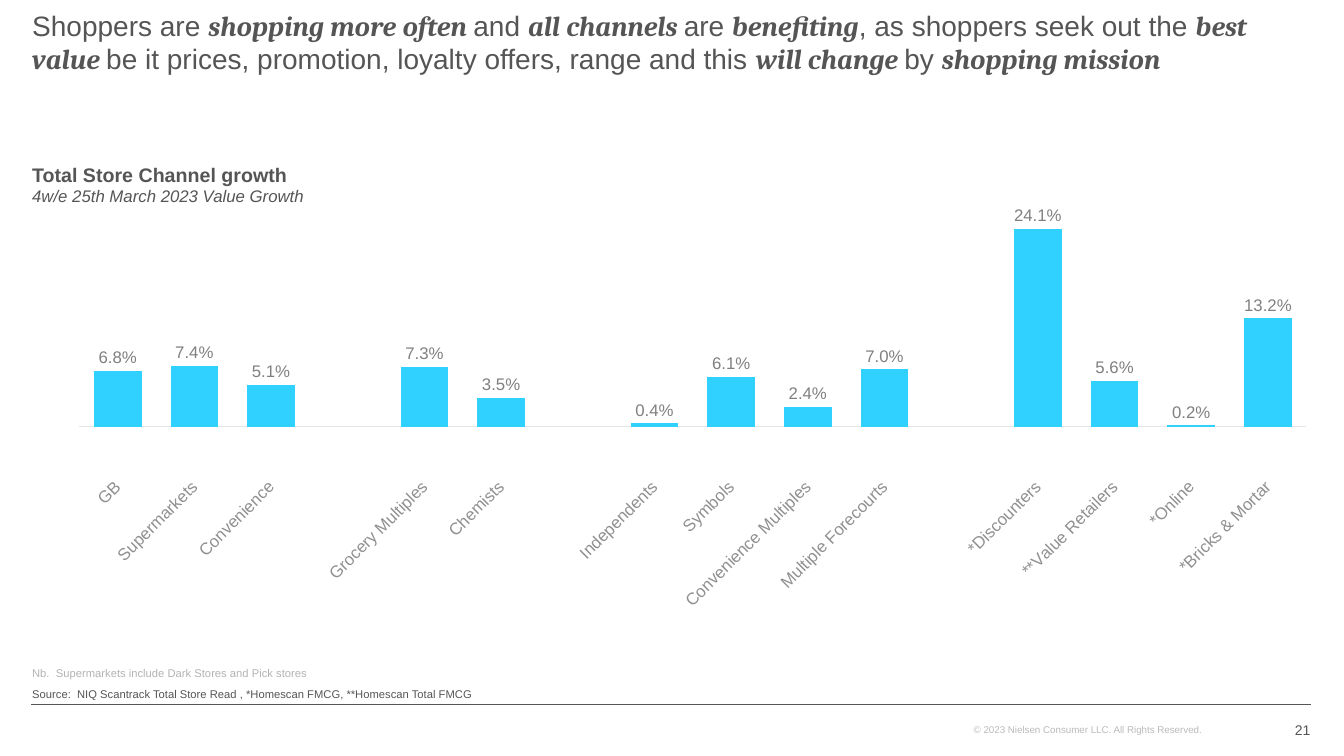
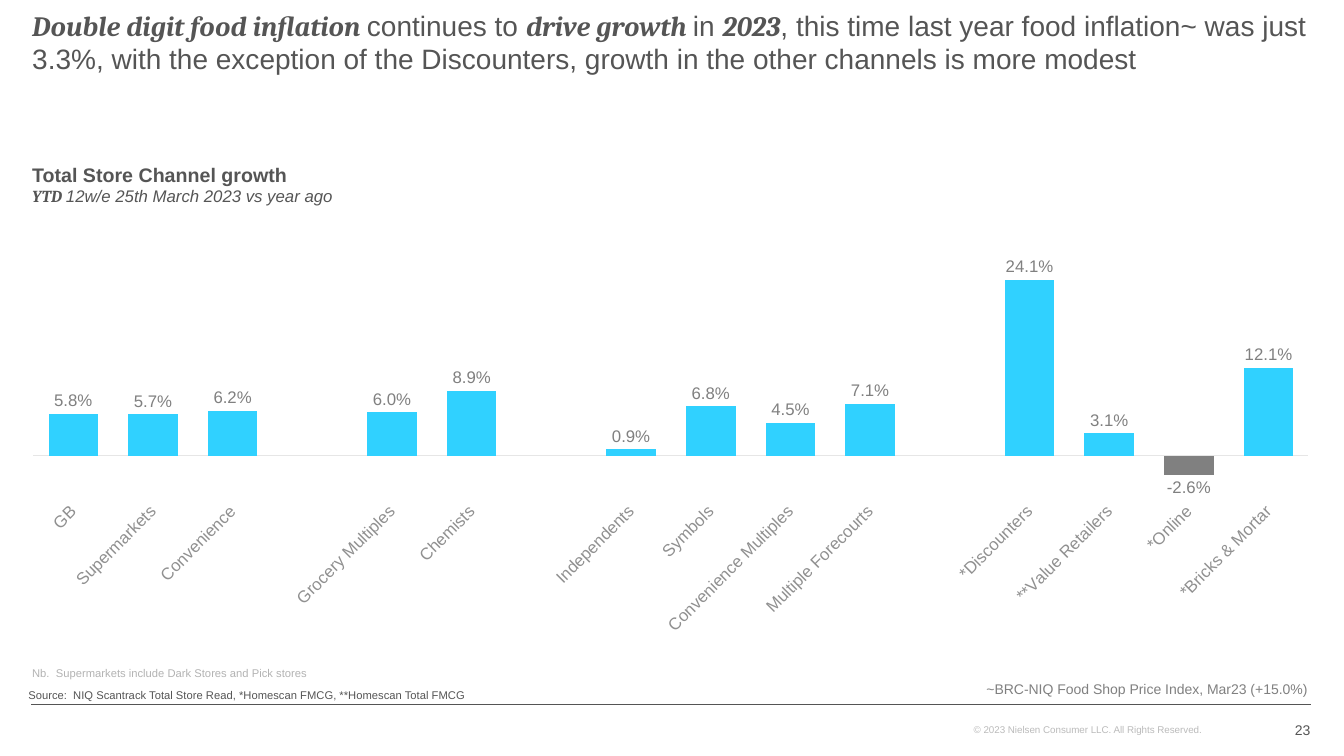
from dataclasses import dataclass

from lxml import etree
from pptx import Presentation
from pptx.chart.data import CategoryChartData
from pptx.dml.color import RGBColor
from pptx.enum.chart import (XL_CHART_TYPE as ChartType, XL_LABEL_POSITION as LabelPos,
                             XL_TICK_LABEL_POSITION as TickLabelPos, XL_TICK_MARK as TickMark)
from pptx.enum.shapes import MSO_CONNECTOR as Connector
from pptx.enum.text import MSO_ANCHOR as Anchor, MSO_AUTO_SIZE as AutoSize, PP_ALIGN as Align
from pptx.oxml import parse_xml
from pptx.oxml.ns import nsdecls, qn
from pptx.util import Pt


@dataclass(frozen=True)
class Theme:
    ink: str = "555555"
    bar: str = "30D1FF"
    negative: str = "808080"
    value_label: str = "808080"
    category: str = "909090"
    axis: str = "E6E6E6"
    note: str = "B3B3B3"
    copyright: str = "BBBBBB"
    sans: str = "Arial"
    serif: str = "Cambria"
    title: int = 20
    heading: int = 14
    label: int = 12
    small: int = 10
    source: int = 8
    legal: int = 7


@dataclass(frozen=True)
class Box:
    left: float
    top: float
    width: float
    height: float

    def inner(self, dx, dy, width, height):
        return Box(self.left + dx, self.top + dy, width, height)

    def lengths(self):
        return [Pt(v) for v in (self.left, self.top, self.width, self.height)]


THEME = Theme()
LEFT, WIDTH = 23, 912
TITLE_BOX = Box(LEFT, 14.4, WIDTH, 31)
HEADING_BOX = Box(LEFT, 112.3, 344, 38.9)
NOTE_BOX = Box(LEFT, 471.6, 213, 17.3)
INDEX_BOX = Box(615.6, 482.4, 318.2, 26)
FOOTER_BOX = Box(22.3, 503.3, 914.4, 36.7)

CHANNEL_GROUPS = [
    ["GB", "Supermarkets", "Convenience"],
    ["Grocery Multiples", "Chemists"],
    ["Independents", "Symbols", "Convenience Multiples", "Multiple Forecourts"],
    ["*Discounters", "**Value Retailers", "*Online", "*Bricks & Mortar"],
]

SLIDES = [
    dict(
        title="Shoppers are |shopping more often |and |all channels |are |benefiting|, as shoppers "
              "seek out the |best value |be it prices, promotion, loyalty offers, range and this "
              "|will change |by |shopping mission",
        period="4w/e 25th March 2023 Value Growth",
        growth=[[0.068, 0.074, 0.051], [0.073, 0.035], [0.004, 0.061, 0.024, 0.07],
                [0.241, 0.056, 0.002, 0.132]],
        chart_box=Box(LEFT, 123.8, WIDTH, 326.9),
        plot=(0.037, 0.015, 0.961, 0.629),
        source="Source:  NIQ Scantrack Total Store Read , *Homescan FMCG, **Homescan Total FMCG",
        source_box=Box(LEFT, 487.4, WIDTH, 34.6),
        page="21",
    ),
    dict(
        title="|Double digit food inflation |continues to |drive growth |in |2023|, this time last "
              "year food inflation~ was just 3.3%, with the exception of the Discounters, growth "
              "in the other channels is more modest",
        period="|YTD |12w/e 25th March 2023 vs year ago",
        growth=[[0.058, 0.057, 0.062], [0.06, 0.089], [0.009, 0.068, 0.045, 0.071],
                [0.241, 0.031, -0.026, 0.121]],
        chart_box=Box(LEFT, 151.9, WIDTH, 312.5),
        plot=(0.001, 0.055, 0.999, 0.585),
        source="Source:  NIQ Scantrack Total Store Read, *Homescan FMCG, **Homescan Total FMCG",
        source_box=Box(20.2, 488.2, WIDTH, 34.6),
        page="23",
        index="~BRC-NIQ Food Shop Price Index, Mar23 (+15.0%)",
    ),
]


def apply(target, **values):
    for name, value in values.items():
        setattr(target, name, value)


def set_font(font, size, color=THEME.ink, **values):
    apply(font, **{"name": THEME.sans, "size": Pt(size), **values})
    font.color.rgb = RGBColor.from_string(color)


def set_fill(fmt, color):
    fmt.fill.solid()
    fmt.fill.fore_color.rgb = RGBColor.from_string(color)


# Text: every second part between bars is emphasised in the serif face
def write(paragraph, marked, size, color=THEME.ink, align=Align.LEFT, bold=False, italic=False):
    apply(paragraph, alignment=align, space_before=Pt(0))
    for i, words in enumerate(marked.split("|")):
        if not words:
            continue
        run = paragraph.add_run()
        run.text = words
        strong = i % 2 == 1
        set_font(run.font, size, color, name=THEME.serif if strong else THEME.sans,
                 bold=strong or bold, italic=strong or italic)


def set_frame(shape, box, anchor=Anchor.TOP):
    apply(shape, **dict(zip(("left", "top", "width", "height"), box.lengths())))
    frame = shape.text_frame
    apply(frame, word_wrap=True, auto_size=AutoSize.NONE, vertical_anchor=anchor, margin_left=0,
          margin_right=0, margin_top=Pt(3.6), margin_bottom=Pt(3.6))
    return frame


def add_text(slide, box, words, size, color=THEME.ink, anchor=Anchor.TOP, align=Align.LEFT):
    frame = set_frame(slide.shapes.add_textbox(*box.lengths()), box, anchor)
    write(frame.paragraphs[0], words, size, color, align)


# Footer: rule, copyright and page number
def add_footer(slide, box, page):
    rule = slide.shapes.add_connector(Connector.STRAIGHT, Pt(box.left), Pt(box.top),
                                      Pt(box.left + box.width), Pt(box.top))
    rule.line.width = Pt(1)
    rule.line.color.rgb = RGBColor.from_string(THEME.ink)
    etree.SubElement(rule._element.spPr, qn("a:effectLst"))
    add_text(slide, box.inner(673.2, 10.1, 204.5, 15.8),
             "© 2023 Nielsen Consumer LLC. All Rights Reserved.", THEME.legal, THEME.copyright)
    add_text(slide, box.inner(842.4, 3.6, 71.3, 28.8), page, THEME.small,
             anchor=Anchor.MIDDLE, align=Align.RIGHT)


def fill_title(slide, box, words):
    frame = set_frame(slide.shapes.title, box, Anchor.MIDDLE)
    write(frame.paragraphs[0], words, THEME.title)


def fill_source(slide, box, words):
    frame = set_frame(slide.placeholders[1], box)
    source = frame.paragraphs[0]
    properties = source._p.get_or_add_pPr()
    apply_indent = {"marL": "0", "indent": "0"}
    for name, value in apply_indent.items():
        properties.set(name, value)
    etree.SubElement(properties, qn("a:buNone"))
    write(source, words, THEME.source)


def add_heading(slide, box, period):
    frame = set_frame(slide.shapes.add_textbox(*box.lengths()), box, Anchor.MIDDLE)
    write(frame.paragraphs[0], "Total Store Channel growth", THEME.heading, bold=True)
    write(frame.add_paragraph(), period, THEME.label, italic=True)


def spaced(groups, gap):
    """Join the groups with one empty slot between neighbours."""
    joined = list(groups[0])
    for group in groups[1:]:
        joined += [gap, *group]
    return joined


# Chart: one column per channel, negative growth in grey
def add_growth_chart(slide, box, growth, plot_area):
    values = spaced(growth, None)
    data = CategoryChartData(number_format="0.0%")
    data.categories = spaced(CHANNEL_GROUPS, "")
    data.add_series("Series 1", values)
    chart = slide.shapes.add_chart(ChartType.COLUMN_CLUSTERED, *box.lengths(), data).chart
    apply(chart, has_legend=False, has_title=False)
    set_font(chart.font, THEME.small)

    columns = chart.plots[0]
    apply(columns, gap_width=61, overlap=-30, vary_by_categories=False, has_data_labels=True)
    labels = columns.data_labels
    apply(labels, show_value=True, position=LabelPos.OUTSIDE_END, number_format="0.0%",
          number_format_is_linked=False)
    set_font(labels.font, THEME.label, THEME.value_label)
    growth_series = columns.series[0]
    growth_series.invert_if_negative = False
    set_fill(growth_series.format, THEME.bar)
    for i, value in enumerate(values):
        if value is not None and value < 0:
            set_fill(growth_series.points[i].format, THEME.negative)

    apply(chart.value_axis, visible=False, has_major_gridlines=False,
          minimum_scale=-0.05, maximum_scale=0.3)
    channels = chart.category_axis
    apply(channels, tick_label_position=TickLabelPos.LOW, has_major_gridlines=False,
          major_tick_mark=TickMark.NONE, minor_tick_mark=TickMark.NONE)
    set_font(channels.tick_labels.font, THEME.label, THEME.category)
    channels.format.line.width = Pt(0.75)
    channels.format.line.color.rgb = RGBColor.from_string(THEME.axis)
    slant = channels._element.find(qn("c:txPr")).find(qn("a:bodyPr"))
    slant.set("rot", "-2700000")
    slant.set("vert", "horz")
    set_plot_area(chart, plot_area)


def set_plot_area(chart, shares):
    area = chart._chartSpace.find(".//" + qn("c:plotArea"))
    for old in area.findall(qn("c:layout")):
        area.remove(old)
    modes = '<c:xMode val="edge"/><c:yMode val="edge"/>'
    sizes = "".join(f'<c:{tag} val="{share}"/>' for tag, share in zip("xywh", shares))
    area.insert(0, parse_xml(
        f'<c:layout {nsdecls("c")}><c:manualLayout><c:layoutTarget val="inner"/>'
        f'{modes}{sizes}</c:manualLayout></c:layout>'))


def add_channel_slide(deck, content):
    slide = deck.slides.add_slide(deck.slide_layouts[1])
    add_footer(slide, FOOTER_BOX, content["page"])
    fill_source(slide, content["source_box"], content["source"])
    fill_title(slide, TITLE_BOX, content["title"])
    add_growth_chart(slide, content["chart_box"], content["growth"], content["plot"])
    add_heading(slide, HEADING_BOX, content["period"])
    add_text(slide, NOTE_BOX, "Nb.  Supermarkets include Dark Stores and Pick stores",
             THEME.source, THEME.note, Anchor.BOTTOM)
    if "index" in content:
        add_text(slide, INDEX_BOX, content["index"], THEME.small, THEME.value_label,
                 align=Align.RIGHT)


def main():
    deck = Presentation()
    apply(deck, slide_width=Pt(960), slide_height=Pt(540))
    for content in SLIDES:
        add_channel_slide(deck, content)
    deck.save("out.pptx")


if __name__ == "__main__":
    main()
